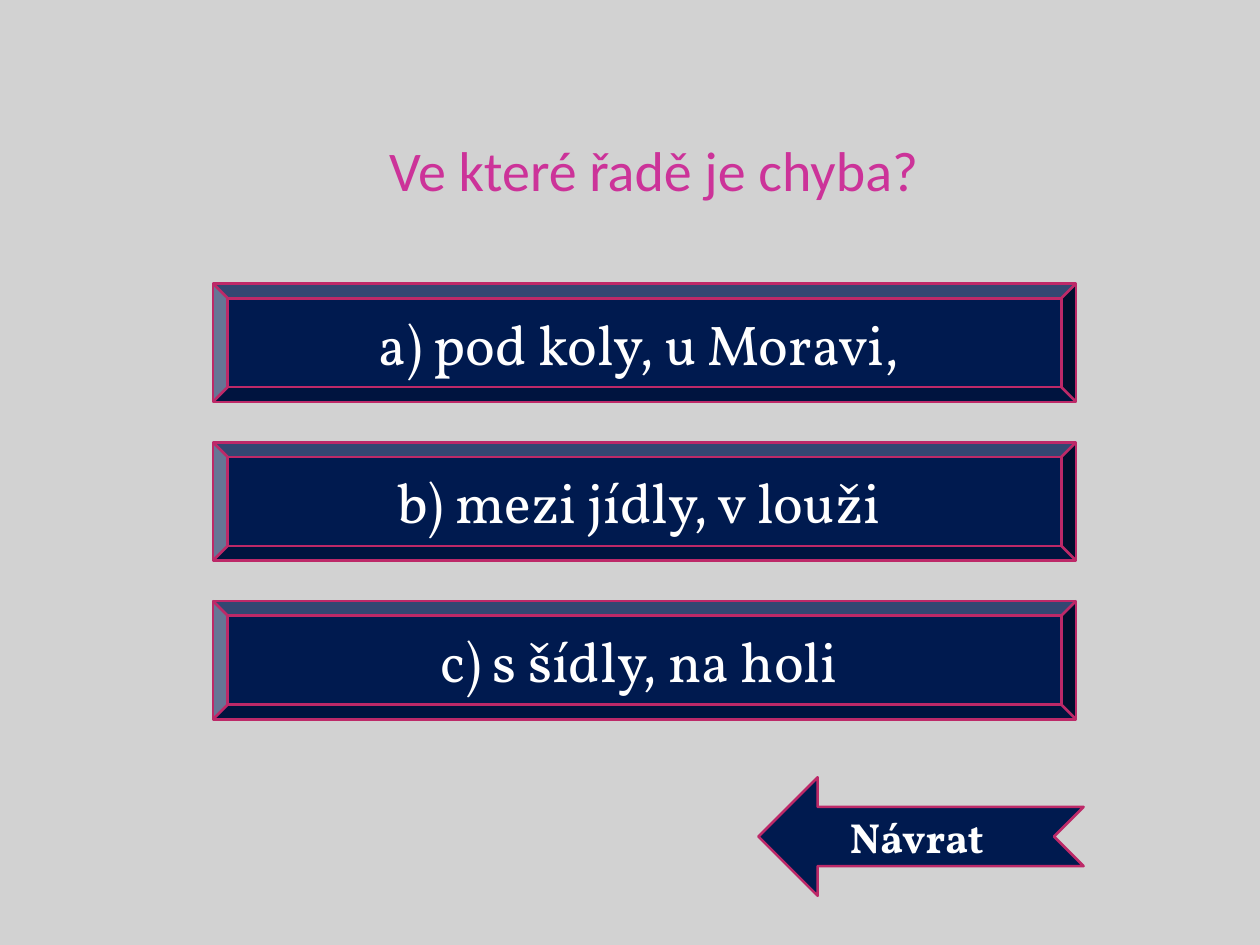
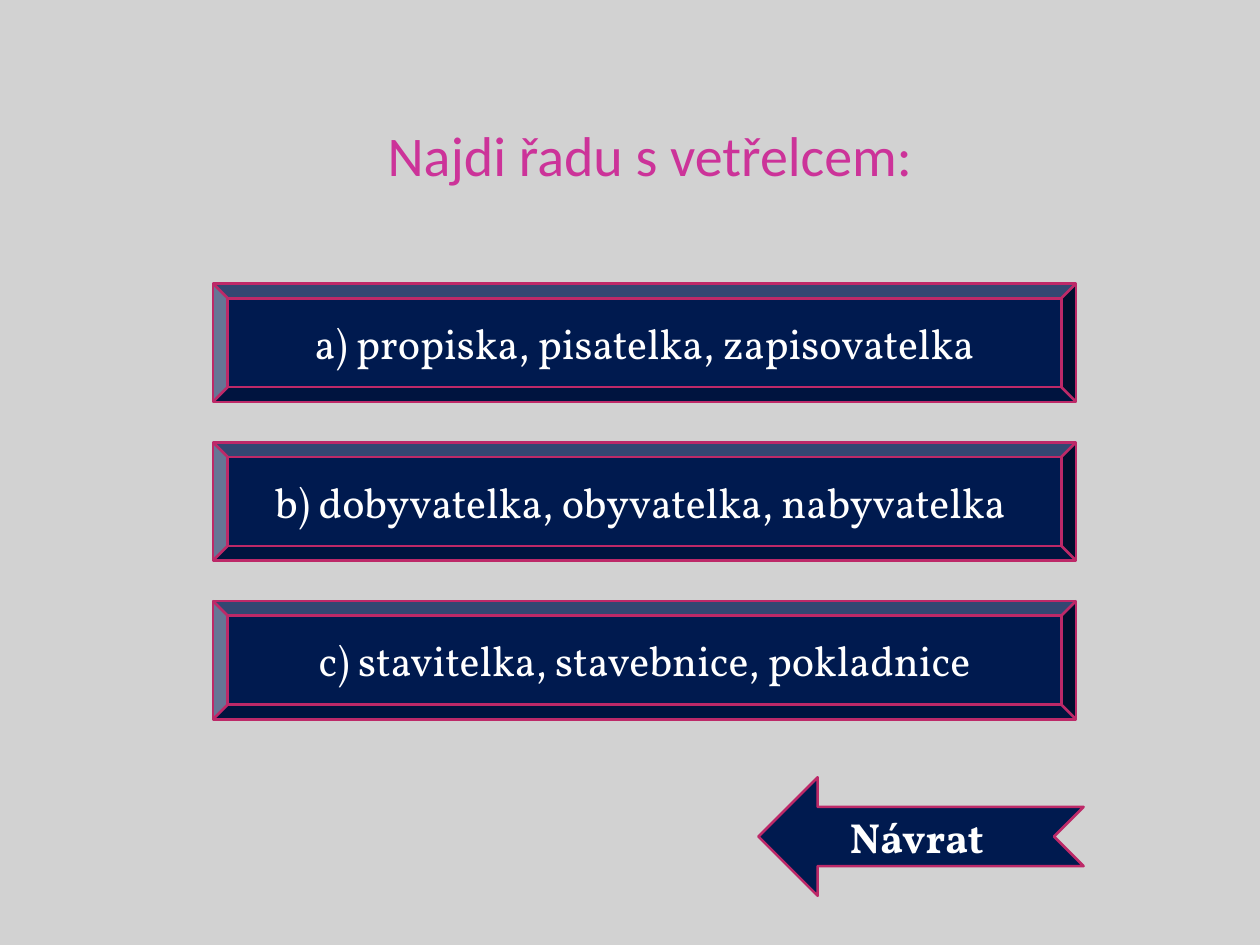
from pptx import Presentation
from pptx.dml.color import RGBColor as Rgb
from pptx.enum.shapes import MSO_SHAPE as Kind
from pptx.enum.text import MSO_ANCHOR as Anchor, MSO_AUTO_SIZE as Fit, PP_ALIGN as Align
from pptx.util import Pt

HUES = {"back": "D2D2D2", "title": "CC3399", "fill": "001A4F",
        "edge": "BD2968", "text": "FFFFFF"}
HEAD, BODY = "Calibri", "Vollkorn"
LEFT, TOP, WIDE, HIGH, STEP = 121.7, 162, 493.2, 67.7, 90.7

QUIZ = [
    {"title": "Ve které řadě je chyba? ", "at": (82.1, 25.9),
     "pads": (0, 3.6, 0, 0), "size": 32,
     "rows": ["a) pod koly, u Moravi, ", "b) mezi jídly, v louži ",
              "c) s šídly, na holi "]},
    {"title": "Najdi řadu s vetřelcem:", "at": (76.3, 20.9),
     "pads": (7.2, 3.6, 7.2, 3.6), "size": 24,
     "rows": ["a) propiska, pisatelka, zapisovatelka",
              "b) dobyvatelka, obyvatelka, nabyvatelka ",
              "c) stavitelka, stavebnice, pokladnice"]},
]


def hue(name):
    return Rgb.from_string(HUES[name])


class Deck:
    """Holds the shared style and the current slide."""

    def __init__(self):
        self.prs = Presentation()
        self.prs.slide_width, self.prs.slide_height = Pt(720), Pt(540)
        back = self.prs.slide_master.background.fill
        back.solid()
        back.fore_color.rgb = hue("back")

    def page(self):
        self.slide = self.prs.slides.add_slide(self.prs.slide_layouts[5])

    def label(self, shape, text, font, size, tone, anchor, bold=False):
        frame = shape.text_frame
        frame.word_wrap = True
        frame.auto_size = Fit.NONE
        frame.vertical_anchor = anchor
        para = frame.paragraphs[0]
        para.alignment = Align.CENTER
        run = para.add_run()
        run.text = text
        run.font.name, run.font.size, run.font.bold = font, Pt(size), bold
        run.font.color.rgb = hue(tone)

    def title(self, text, at, pads):
        box = self.slide.shapes.title
        box.left, box.top = map(Pt, at)
        box.width, box.height = Pt(590.4), Pt(90)
        self.label(box, text, HEAD, 32, "title", Anchor.BOTTOM)
        frame = box.text_frame
        frame.margin_left, frame.margin_top = Pt(pads[0]), Pt(pads[1])
        frame.margin_right, frame.margin_bottom = Pt(pads[2]), Pt(pads[3])

    def button(self, kind, text, spot, size, bold=False):
        shape = self.slide.shapes.add_shape(kind, *map(Pt, spot))
        shape.shadow.inherit = False
        shape.fill.solid()
        shape.fill.fore_color.rgb = hue("fill")
        shape.line.color.rgb = hue("edge")
        shape.line.width = Pt(1.5)
        self.label(shape, text, BODY, size, "text", Anchor.MIDDLE, bold)
        return shape

    def answers(self, rows, size):
        for i, text in enumerate(rows):
            self.button(Kind.BEVEL, text, (LEFT, TOP + i * STEP, WIDE, HIGH), size)

    def back(self):
        """Add the return arrow, mirrored to point left."""
        arrow = self.button(Kind.NOTCHED_RIGHT_ARROW, "Návrat ",
                            (433.4, 444.2, 185.8, HIGH), 24, True)
        arrow.element.spPr.xfrm.set("flipH", "1")


def main():
    deck = Deck()
    for quiz in QUIZ:
        deck.page()
        deck.title(quiz["title"], quiz["at"], quiz["pads"])
        deck.answers(quiz["rows"], quiz["size"])
        deck.back()
    deck.prs.save("out.pptx")


if __name__ == "__main__":
    main()
